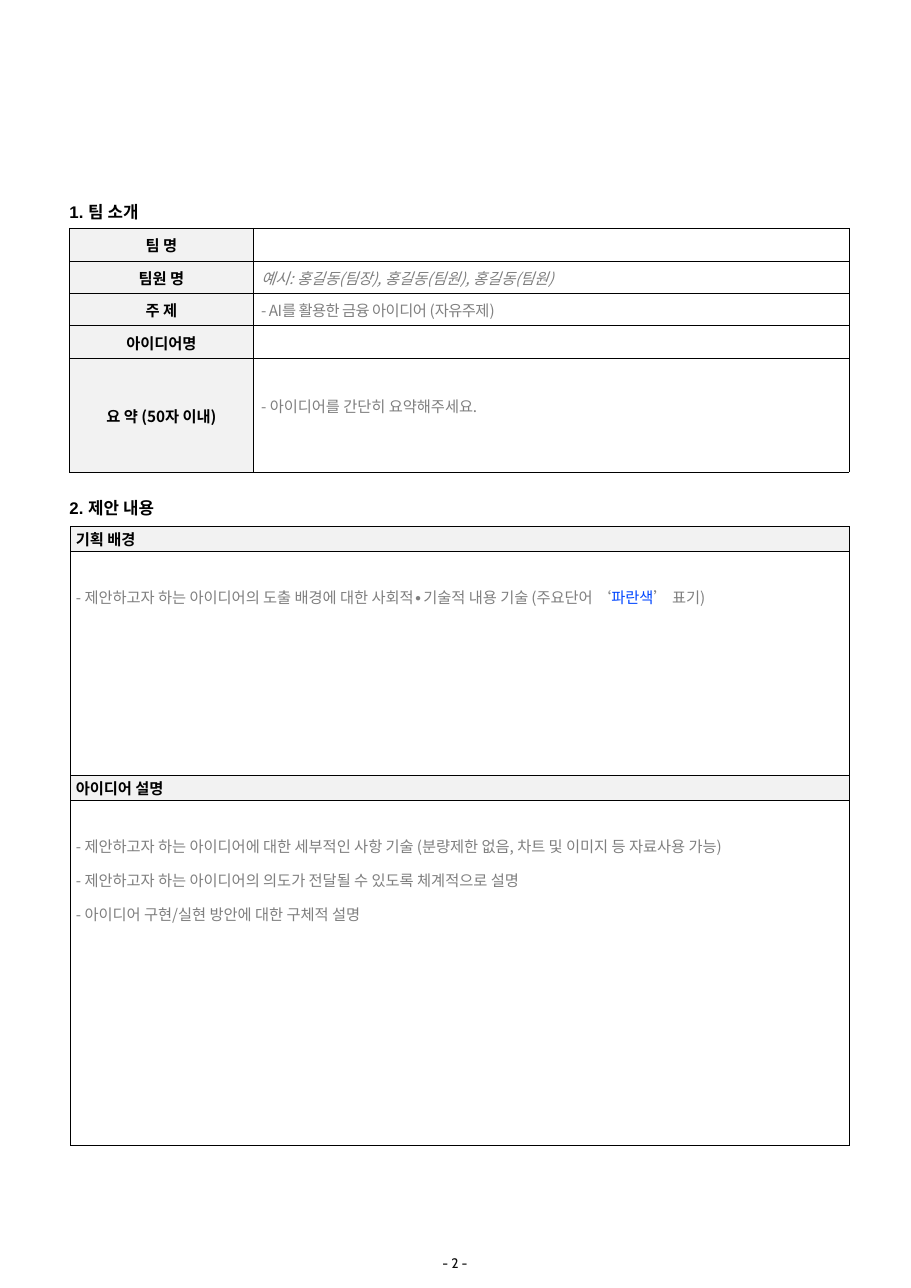
from dataclasses import dataclass

from lxml import etree
from pptx import Presentation
from pptx.dml.color import RGBColor
from pptx.enum.text import MSO_ANCHOR, MSO_AUTO_SIZE, PP_ALIGN
from pptx.oxml.ns import qn
from pptx.slide import Slide
from pptx.table import _Cell
from pptx.text.text import TextFrame, _Paragraph, _Run
from pptx.util import Pt

LEFT, CENTER, JUSTIFY = PP_ALIGN.LEFT, PP_ALIGN.CENTER, PP_ALIGN.JUSTIFY
TOP, MIDDLE = MSO_ANCHOR.TOP, MSO_ANCHOR.MIDDLE
GROW = MSO_AUTO_SIZE.SHAPE_TO_FIT_TEXT


@dataclass(frozen=True)
class Theme:
    black: str = "000000"
    footer: str = "0D0D0D"
    hint: str = "7F7F7F"
    topic_hint: str = "808080"
    keyword: str = "0046FF"
    label_fill: str = "F2F2F2"
    heading_font: str = "Arial"
    table_font: str = "Noto Sans CJK KR"
    footer_font: str = "Cabin"
    heading_size: float = 11
    table_size: float = 10
    footer_size: float = 9
    border_width: float = 0.25


THEME = Theme()


@dataclass(frozen=True)
class Span:
    text: str
    color: str = THEME.hint
    bold: bool = False
    italic: bool = False
    font: str = THEME.table_font
    size: float = THEME.table_size
    tracking: float = 0


@dataclass(frozen=True)
class CellContent:
    paragraphs: tuple[tuple[Span, ...], ...] = ()
    align: PP_ALIGN = LEFT
    anchor: MSO_ANCHOR = MIDDLE
    fill: str | None = None
    line_spacing: float = 1.07
    top: float = 0
    bottom: float = 0


@dataclass(frozen=True)
class FormTable:
    left: float
    top: float
    columns: tuple[float, ...]
    row_heights: tuple[float, ...]
    side_margin: float
    rows: tuple[tuple[CellContent, ...], ...]


@dataclass(frozen=True)
class TextLine:
    left: float
    top: float
    width: float
    height: float
    span: Span


def label(text: str, align: PP_ALIGN = CENTER) -> CellContent:
    return CellContent(((Span(text, THEME.black, bold=True),),), align, fill=THEME.label_fill)


def guidance(*paragraphs: tuple[Span, ...]) -> CellContent:
    """Top-aligned writing area whose hints start one line below the border."""
    return CellContent(paragraphs, JUSTIFY, TOP, "FFFFFF", line_spacing=1, top=22.8)


def heading(text: str, top: float, width: float) -> TextLine:
    span = Span(text, THEME.black, True, font=THEME.heading_font, size=THEME.heading_size)
    return TextLine(45.4, top, width, 17.3, span)


HEADINGS = (
    heading("1. 팀 소개", 125.3, 50.4),
    heading("2. 제안 내용", 318.6, 61.9),
)
PAGE_NUMBER = TextLine(230.4, 811.4, 133.9, 28.1, Span(
    "- 2 -", THEME.footer, font=THEME.footer_font, size=THEME.footer_size))

TEAM_TABLE = FormTable(45.4, 149.1, (120.2, 389.5), (21.25,) * 4 + (74.6,), 5.1, (
    (label("팀 명"), CellContent()),
    (label("팀원 명"), CellContent(
        ((Span("예시: 홍길동(팀장), 홍길동(팀원), 홍길동(팀원)", italic=True),),))),
    (label("주 제"), CellContent(
        ((Span("- AI를 활용한 금융 아이디어 (자유주제)", THEME.topic_hint, tracking=-0.3),),))),
    (label("아이디어명"), CellContent()),
    (label("요 약 (50자 이내)"), CellContent(
        ((Span("- 아이디어를 간단히 요약해주세요."),),), bottom=13)),
))
PROPOSAL_TABLE = FormTable(46, 344.1, (509,), (15.8, 146.9, 15.8, 226.1), 3.6, (
    (label("기획 배경", JUSTIFY),),
    (guidance((
        Span("- 제안하고자 하는 아이디어의 도출 배경에 대한 사회적∙기술적 내용 기술 (주요단어 ‘"),
        Span("파란색", THEME.keyword),
        Span("’ 표기)"),
    )),),
    (label("아이디어 설명", JUSTIFY),),
    (guidance(
        (Span("- 제안하고자 하는 아이디어에 대한 세부적인 사항 기술 "
              "(분량제한 없음, 차트 및 이미지 등 자료사용 가능)"),),
        (Span("- 제안하고자 하는 아이디어의 의도가 전달될 수 있도록 체계적으로 설명"),),
        (Span("- 아이디어 구현/실현 방안에 대한 구체적 설명"),),
    ),),
))


def format_run(run: _Run, span: Span) -> None:
    font = run.font
    font.name, font.size = span.font, Pt(span.size)
    font.bold, font.italic = span.bold, span.italic
    font.color.rgb = RGBColor.from_string(span.color)
    properties = run._r.get_or_add_rPr()
    etree.SubElement(properties, qn("a:ea"), typeface=THEME.table_font)
    if span.tracking:
        properties.set("spc", str(round(span.tracking * 100)))


def write_spans(paragraph: _Paragraph, spans: tuple[Span, ...]) -> None:
    for span in spans:
        run = paragraph.add_run()
        run.text = span.text
        format_run(run, span)


def write_cell_text(text_frame: TextFrame, content: CellContent) -> None:
    for index, spans in enumerate(content.paragraphs):
        paragraph = text_frame.add_paragraph() if index else text_frame.paragraphs[0]
        paragraph.alignment = content.align
        paragraph.line_spacing = content.line_spacing
        paragraph.space_after = Pt(8)
        write_spans(paragraph, spans)
    if not content.paragraphs:
        # The size of an empty line keeps the row from growing.
        etree.SubElement(text_frame.paragraphs[0]._p, qn("a:endParaRPr"),
                         sz=str(round(THEME.table_size * 100)))


def add_borders(cell: _Cell) -> None:
    properties = cell._tc.get_or_add_tcPr()
    for side in ("a:lnL", "a:lnR", "a:lnT", "a:lnB"):
        line = etree.SubElement(properties, qn(side), w=str(Pt(THEME.border_width)))
        fill = etree.SubElement(line, qn("a:solidFill"))
        etree.SubElement(fill, qn("a:srgbClr"), val=THEME.black)


def fill_cell(cell: _Cell, content: CellContent, side_margin: float) -> None:
    cell.margin_left = cell.margin_right = Pt(side_margin)
    cell.margin_top, cell.margin_bottom = Pt(content.top), Pt(content.bottom)
    cell.vertical_anchor = content.anchor
    add_borders(cell)
    if content.fill:
        cell.fill.solid()
        cell.fill.fore_color.rgb = RGBColor.from_string(content.fill)
    else:
        cell.fill.background()
    write_cell_text(cell.text_frame, content)


def add_form_table(slide: Slide, form: FormTable) -> None:
    table = slide.shapes.add_table(
        len(form.rows), len(form.columns), Pt(form.left), Pt(form.top),
        Pt(sum(form.columns)), Pt(sum(form.row_heights))).table
    table.first_row = table.horz_banding = False
    for column, width in zip(table.columns, form.columns):
        column.width = Pt(width)
    for row, height, contents in zip(table.rows, form.row_heights, form.rows):
        row.height = Pt(height)
        for cell, content in zip(row.cells, contents):
            fill_cell(cell, content, form.side_margin)


def add_text_line(slide: Slide, line: TextLine) -> TextFrame:
    box = slide.shapes.add_textbox(Pt(line.left), Pt(line.top), Pt(line.width), Pt(line.height))
    write_spans(box.text_frame.paragraphs[0], (line.span,))
    return box.text_frame


def add_heading(slide: Slide, line: TextLine) -> None:
    frame = add_text_line(slide, line)
    frame.margin_left = frame.margin_right = frame.margin_top = frame.margin_bottom = 0
    frame.word_wrap, frame.auto_size = False, GROW
    frame.paragraphs[0].line_spacing = 1.5


def add_page_number(slide: Slide) -> None:
    frame = add_text_line(slide, PAGE_NUMBER)
    frame.word_wrap, frame.vertical_anchor = True, MIDDLE
    frame.paragraphs[0].alignment = CENTER


def main() -> None:
    presentation = Presentation()
    presentation.slide_width, presentation.slide_height = Pt(595.44), Pt(841.68)
    slide = presentation.slides.add_slide(presentation.slide_layouts[6])
    add_page_number(slide)
    for line, form in zip(HEADINGS, (TEAM_TABLE, PROPOSAL_TABLE)):
        add_heading(slide, line)
        add_form_table(slide, form)
    presentation.save("out.pptx")


if __name__ == "__main__":
    main()
